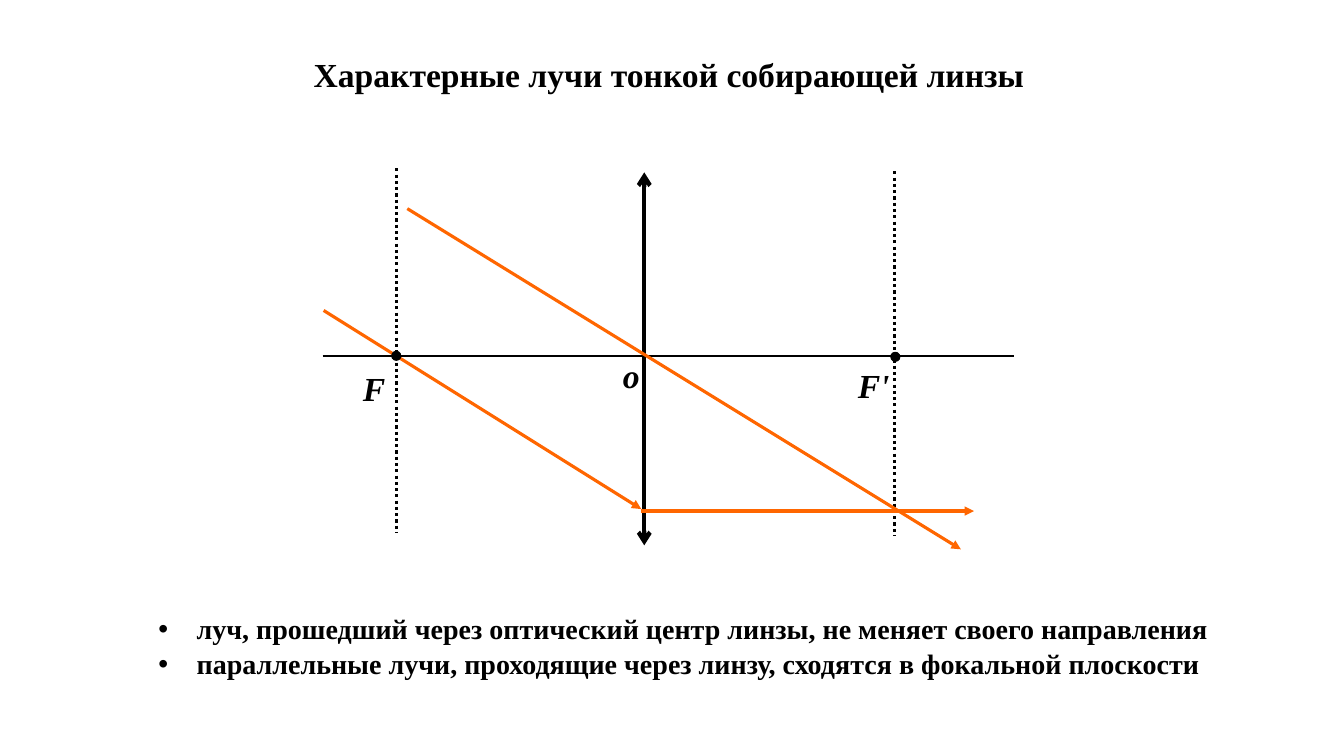
from collections import namedtuple

from lxml import etree
from pptx import Presentation
from pptx.dml.color import RGBColor
from pptx.enum.dml import MSO_LINE
from pptx.enum.shapes import MSO_CONNECTOR, MSO_SHAPE
from pptx.enum.text import MSO_ANCHOR, MSO_AUTO_SIZE, PP_ALIGN
from pptx.oxml.ns import qn
from pptx.util import Inches, Pt

BLACK = RGBColor(0x00, 0x00, 0x00)
ORANGE = RGBColor(0xFF, 0x66, 0x00)
FONT = "Times New Roman"
DOTTED = MSO_LINE.ROUND_DOT
STRAIGHT = MSO_CONNECTOR.STRAIGHT
OVAL = MSO_SHAPE.OVAL
LEFT = PP_ALIGN.LEFT
TOP = MSO_ANCHOR.TOP
NO_AUTOSIZE = MSO_AUTO_SIZE.NONE

Box = namedtuple("Box", "left top width height")

TITLE = "Характерные лучи тонкой собирающей линзы"
RULES = [
    "луч, прошедший через оптический центр линзы, не меняет своего направления",
    "параллельные лучи, проходящие через линзу, сходятся в фокальной плоскости",
]


def place(shape, box):
    shape.left, shape.top, shape.width, shape.height = map(Inches, box)


def write(shape, lines, size, italic=False):
    frame = shape.text_frame
    frame.text = "\n".join(lines)
    frame.word_wrap = True
    frame.auto_size = NO_AUTOSIZE
    frame.vertical_anchor = TOP
    for para in frame.paragraphs:
        para.alignment = LEFT
        para.space_before = Pt(0)
        for span in para.runs:
            span.font.name = FONT
            span.font.size = Pt(size)
            span.font.bold = True
            span.font.italic = italic
            span.font.color.rgb = BLACK


def add_title(page, box):
    title = page.shapes.title
    place(title, box)
    write(title, [TITLE], 24)


def add_rules(page, box):
    body = page.placeholders[1]
    place(body, box)
    write(body, RULES, 20)
    for para in body.text_frame.paragraphs:
        para.space_before = Pt(1)
        properties = para._p.get_or_add_pPr()
        properties.set("marL", str(Inches(0.38)))
        properties.set("indent", str(-Inches(0.38)))
        etree.SubElement(properties, qn("a:buFont")).set("typeface", "Arial")
        etree.SubElement(properties, qn("a:buChar")).set("char", "•")


def add_line(page, start, end, color, width, dash=None, head=None, tail=None):
    line = page.shapes.add_connector(STRAIGHT, *map(Inches, start + end))
    line.line.color.rgb = color
    line.line.width = Pt(width)
    if dash:
        line.line.dash_style = dash
    outline = line.line._get_or_add_ln()
    for tag, kind in (("a:headEnd", head), ("a:tailEnd", tail)):
        if kind:
            etree.SubElement(outline, qn(tag)).set("type", kind)
    etree.SubElement(line._element.spPr, qn("a:effectLst"))


def add_focus(page, x, y):
    size = 0.09
    dot = page.shapes.add_shape(
        OVAL, *map(Inches, (x - size / 2, y - size / 2, size, size)))
    dot.shadow.inherit = False
    dot.fill.solid()
    dot.fill.fore_color.rgb = BLACK
    dot.line.color.rgb = BLACK
    dot.line.width = Pt(0.75)


def add_label(page, text, box):
    label = page.shapes.add_textbox(*map(Inches, box))
    write(label, [text], 24, italic=True)


def add_lens_diagram(page, box):
    left, top = box.left, box.top
    right, bottom = left + box.width, top + box.height
    lens, axis = left + 3.19, top + 1.86
    front, back = lens - 2.46, lens + 2.48
    exit_y = axis + 1.54

    add_line(page, (left, axis), (right, axis), BLACK, 1.5)
    add_line(page, (lens, top + 0.04), (lens, bottom - 0.04), BLACK, 3,
             head="arrow", tail="arrow")
    for x, y in ((front, top), (back, top + 0.03)):
        add_line(page, (x, y), (x, y + 3.62), BLACK, 2.25, dash=DOTTED)

    rays = [
        ((front + 0.11, top + 0.4), (back + 0.66, bottom)),
        ((left + 0.01, axis - 0.45), (lens - 0.03, exit_y - 0.02)),
        ((lens - 0.03, exit_y), (back + 0.79, exit_y)),
    ]
    for start, end in rays:
        add_line(page, start, end, ORANGE, 2.25, tail="triangle")

    add_focus(page, front, axis)
    add_focus(page, back + 0.01, axis + 0.01)
    add_label(page, "o", Box(lens - 0.31, axis - 0.06, 0.29, 0.42))
    add_label(page, "F", Box(front - 0.43, axis + 0.07, 0.29, 0.42))
    add_label(page, "F'", Box(back - 0.46, axis + 0.04, 0.55, 0.42))


def main():
    deck = Presentation()
    deck.slide_width, deck.slide_height = Inches(13.33), Inches(7.5)
    page = deck.slides.add_slide(deck.slide_layouts[1])
    add_title(page, Box(3.01, 0.48, 7.96, 0.5))
    add_lens_diagram(page, Box(3.2, 1.67, 6.86, 3.78))
    add_rules(page, Box(1.47, 6.02, 10.69, 1.18))
    deck.save("out.pptx")


if __name__ == "__main__":
    main()
